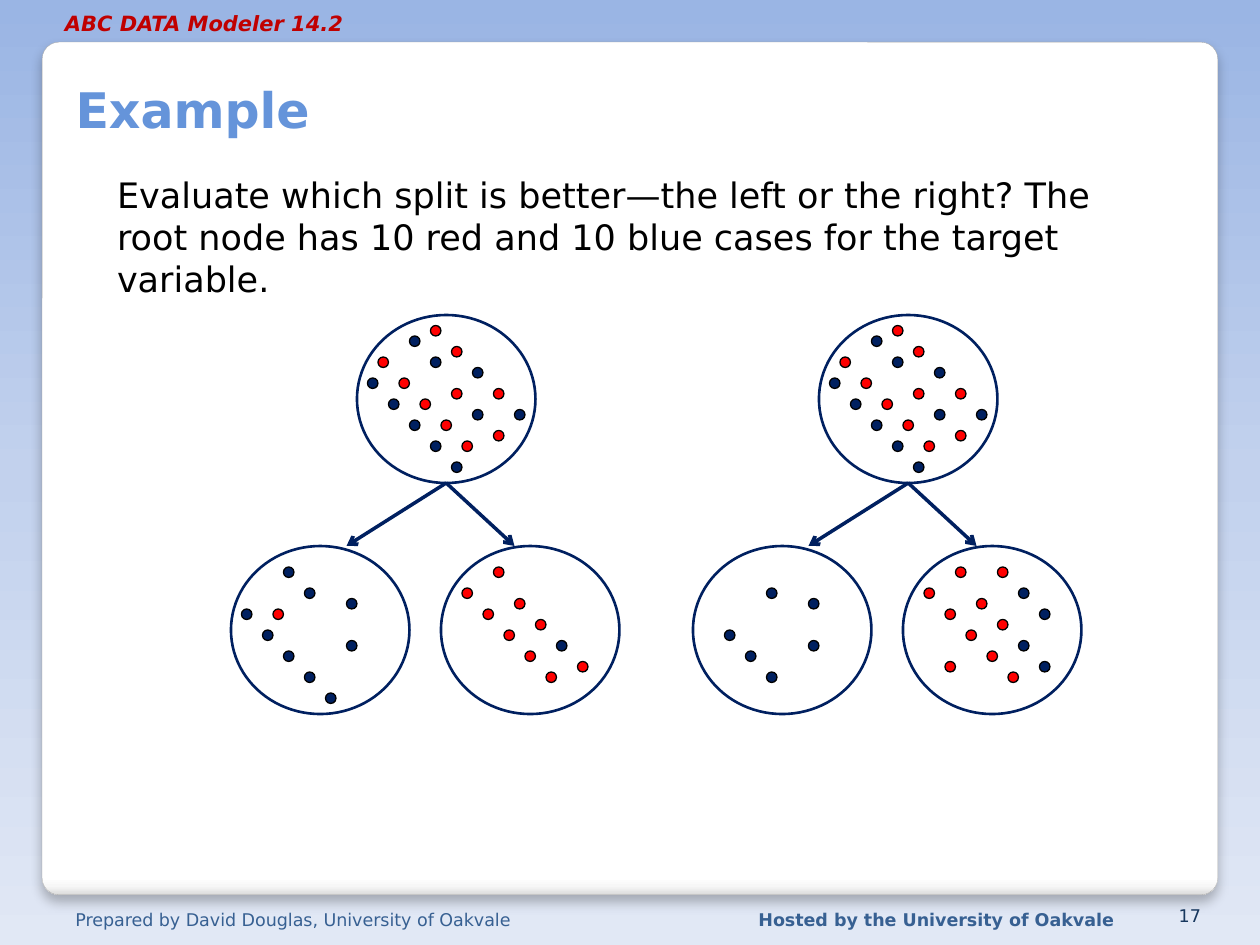
from lxml.etree import SubElement
from pptx import Presentation
from pptx.dml.color import RGBColor
from pptx.enum.shapes import MSO_CONNECTOR, MSO_SHAPE
from pptx.enum.text import MSO_ANCHOR, MSO_AUTO_SIZE, PP_ALIGN
from pptx.oxml.ns import qn
from pptx.util import Cm, Pt

FONT = "DejaVu Sans"
NAVY = RGBColor(0x00, 0x20, 0x60)
RED = RGBColor(0xFF, 0x00, 0x00)
BLACK = RGBColor(0x00, 0x00, 0x00)
CRIMSON = RGBColor(0xC0, 0x00, 0x00)
SKY = RGBColor(0x65, 0x94, 0xDA)
STEEL = RGBColor(0x37, 0x60, 0x92)
DEEP_BLUE = RGBColor(0x17, 0x37, 0x5E)
SILVER = RGBColor(0xA4, 0xA4, 0xA4)
BACKDROP_STOPS = [
    (0, RGBColor(0x9A, 0xB5, 0xE4)),
    (50, RGBColor(0xC2, 0xD1, 0xED)),
    (100, RGBColor(0xE1, 0xE8, 0xF5)),
]
PANEL_STOPS = [
    (0, RGBColor(0xFF, 0xFF, 0xFF)),
    (98, RGBColor(0xFF, 0xFF, 0xFF)),
    (99, RGBColor(0xF7, 0xF7, 0xF7)),
    (100, RGBColor(0xDA, 0xDA, 0xDA)),
]

GRID = Cm(2.54 / 12)
NODE_SIZE = (17, 16)
ROOT_AT, LEFT_AT, RIGHT_AT = (12, 0), (0, 22), (20, 22)
ARROW_START, ARROW_ENDS = (20.5, 16), [(27, 22), (11, 22)]

BLUE_DIAGONAL = [(1 + 2 * i, 6 + 2 * i) for i in range(5)]
RED_DIAGONAL = [(2 + 2 * i, 4 + 2 * i) for i in range(5)]
BLUE_CLUSTER = [(7, 4), (11, 5), (11, 9)]
RED_CLUSTER = RED_DIAGONAL + [(5, 2), (7, 5), (9, 7)]

ROOT_CASES = {
    NAVY: BLUE_DIAGONAL + BLUE_CLUSTER + [(5, 2), (15, 9)],
    RED: RED_DIAGONAL + [(7, 1), (9, 3), (9, 7), (13, 7), (13, 11)],
}
LEFT_SPLIT = [
    (ROOT_AT, ROOT_CASES),
    (LEFT_AT, {NAVY: BLUE_DIAGONAL + BLUE_CLUSTER + [(5, 2)], RED: [(4, 6)]}),
    (RIGHT_AT, {NAVY: [(11, 9)], RED: RED_CLUSTER + [(13, 11)]}),
]
RIGHT_SPLIT = [
    (ROOT_AT, ROOT_CASES),
    (LEFT_AT, {NAVY: BLUE_DIAGONAL[1:4] + BLUE_CLUSTER}),
    (RIGHT_AT, {NAVY: [(11, 4), (13, 6), (11, 9), (13, 11)],
                RED: RED_CLUSTER + [(9, 2), (4, 11)]}),
]


def paint_gradient(fill, owner, stops):
    """Fill the owner element from top to bottom with the given stops."""
    fill.gradient()
    fill.gradient_angle = 270
    stop_list = owner.find(".//" + qn("a:gsLst"))
    for old_stop in list(stop_list):
        stop_list.remove(old_stop)
    for percent, color in stops:
        stop = SubElement(stop_list, qn("a:gs"), pos=str(percent * 1000))
        SubElement(stop, qn("a:srgbClr"), val=str(color))


def style_text(frame, text, size, color, bold=False, italic=False,
               align=PP_ALIGN.LEFT, anchor=MSO_ANCHOR.TOP, wrap=True):
    """Write one paragraph and format it."""
    frame.text = text
    frame.word_wrap = wrap
    frame.auto_size = MSO_AUTO_SIZE.NONE
    frame.vertical_anchor = anchor
    paragraph = frame.paragraphs[0]
    paragraph.alignment = align
    font = paragraph.font
    font.name, font.size, font.bold, font.italic = FONT, Pt(size), bold, italic
    font.color.rgb = color


def add_label(slide, box, text, size, color, **style):
    """Add a text box in the given box."""
    label = slide.shapes.add_textbox(*map(Cm, box))
    style_text(label.text_frame, text, size, color, **style)


def add_panel(slide, box):
    """Place the rounded white panel behind everything else."""
    panel = slide.shapes.add_shape(MSO_SHAPE.ROUNDED_RECTANGLE, *map(Cm, box))
    panel.adjustments[0] = 0.02
    paint_gradient(panel.fill, panel._element, PANEL_STOPS)
    panel.line.color.rgb = SILVER
    panel.line.width = Pt(0.16)
    panel.shadow.inherit = False
    effects = panel._element.spPr.find(qn("a:effectLst"))
    shadow = SubElement(effects, qn("a:outerShdw"), blurRad=str(Pt(6)),
                        dist=str(Pt(4)), dir="5400000", rotWithShape="0")
    shade = SubElement(shadow, qn("a:srgbClr"), val=str(BLACK))
    SubElement(shade, qn("a:alpha"), val="25000")
    slide.shapes._spTree.insert(2, panel._element)


def add_title(slide, box, text):
    """Move and format the title placeholder."""
    title = slide.shapes.title
    title.left, title.top, title.width, title.height = map(Cm, box)
    style_text(title.text_frame, text, 28, SKY, bold=True,
               anchor=MSO_ANCHOR.BOTTOM)


def add_circle(slide, left, top, size, line_color, line_width, fill_color=None):
    """Add a circle measured in grid units."""
    box = [round(n * GRID) for n in (left, top, *size)]
    circle = slide.shapes.add_shape(MSO_SHAPE.FLOWCHART_CONNECTOR, *box)
    circle.shadow.inherit = False
    circle.line.color.rgb = line_color
    circle.line.width = Pt(line_width)
    if fill_color is None:
        circle.fill.background()
    else:
        circle.fill.solid()
        circle.fill.fore_color.rgb = fill_color


def add_node(slide, left, top, cases):
    """Draw a tree node and the cases inside it."""
    add_circle(slide, left, top, NODE_SIZE, NAVY, 1.5)
    for color, spots in cases.items():
        for x, y in spots:
            add_circle(slide, left + x, top + y, (1, 1), BLACK, 0.75, color)


def add_arrow(slide, start, end):
    """Draw an arrow between two grid points."""
    ends = [round(n * GRID) for n in (*start, *end)]
    arrow = slide.shapes.add_connector(MSO_CONNECTOR.STRAIGHT, *ends)
    arrow.line.color.rgb = NAVY
    arrow.line.width = Pt(2)
    SubElement(arrow.line._get_or_add_ln(), qn("a:tailEnd"), type="arrow")
    SubElement(arrow._element.spPr, qn("a:effectLst"))


def add_split(slide, left, top, nodes):
    """Draw a root node, its two children and the arrows to them."""
    for (x, y), cases in nodes:
        add_node(slide, left + x, top + y, cases)
    start = (left + ARROW_START[0], top + ARROW_START[1])
    for x, y in ARROW_ENDS:
        add_arrow(slide, start, (left + x, top + y))


def add_footer(slide, left, top, height):
    """Place the credits and the page number along the bottom."""
    add_label(slide, (left, top, 11.33, height),
              "Prepared by David Douglas, University of Oakvale", 10, STEEL)
    add_label(slide, (left + 13.77, top, 8.46, height),
              "Hosted by the University of Oakvale", 10, STEEL, bold=True)
    add_label(slide, (left + 21.92, top, 1.27, height), "17", 10, DEEP_BLUE,
              align=PP_ALIGN.RIGHT, anchor=MSO_ANCHOR.BOTTOM)


def main():
    """Build and save the slide."""
    deck = Presentation()
    deck.slide_width, deck.slide_height = Cm(25.4), Cm(19.05)
    slide = deck.slides.add_slide(deck.slide_layouts[5])
    paint_gradient(slide.background.fill, slide._element, BACKDROP_STOPS)
    add_panel(slide, (0.85, 0.85, 23.7, 17.19))
    add_label(slide, (1.06, 0.08, 6.12, 0.76), "ABC DATA Modeler 14.2", 12,
              CRIMSON, bold=True, italic=True, wrap=False)
    add_title(slide, (1.27, 0, 22.73, 2.92), "Example")
    add_split(slide, 22, 30, LEFT_SPLIT)
    add_split(slide, 66, 30, RIGHT_SPLIT)
    add_footer(slide, 1.27, 18.21, 0.58)
    add_label(slide, (2.11, 3.38, 20.75, 2.82),
              "Evaluate which split is better—the left or the right? The root "
              "node has 10 red and 10 blue cases for the target variable.",
              20, BLACK)
    deck.save("out.pptx")


if __name__ == "__main__":
    main()
